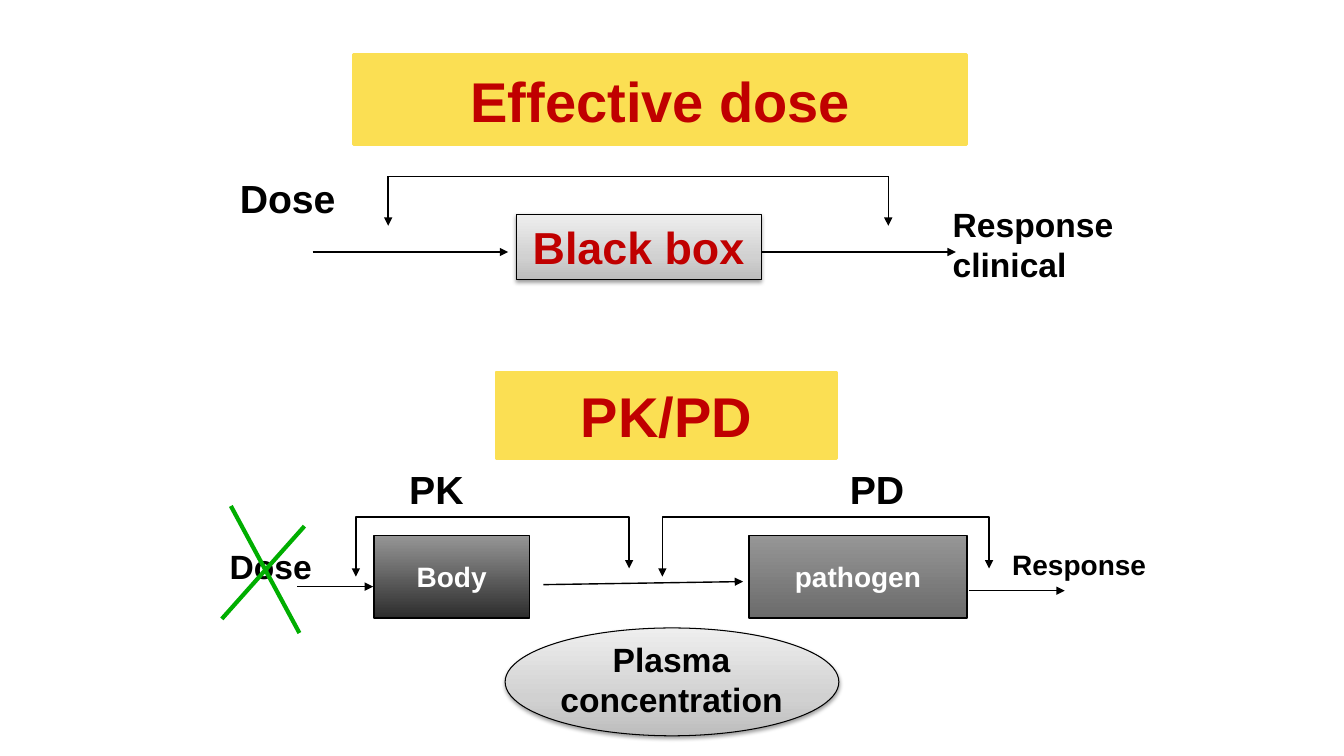
from copy import deepcopy
from dataclasses import dataclass

from lxml import etree
from pptx import Presentation
from pptx import util as u
from pptx.dml.color import RGBColor
from pptx.enum import shapes, text
from pptx.oxml import ns


@dataclass(frozen=True)
class Theme:
    """Colours, type sizes and line widths of the slide."""
    font: str = "Arial"
    ink: str = "000000"
    white: str = "FFFFFF"
    red: str = "C00000"
    yellow: str = "FBDF53"
    green: str = "00AE00"
    silver: tuple = ((0, "BDBDBD"), (0.35, "D1D1D1"), (1, "EEEEEE"))
    body: tuple = ((0, "969696"), (1, "2D2D2D"))
    pathogen: tuple = ((0, "969696"), (1, "6B6B6B"))
    banner_size: int = 40
    box_size: int = 32
    label_size: int = 28
    text_size: int = 24
    small_size: int = 20
    thin: float = 0.75
    line: float = 1
    edge: float = 2
    thick: float = 3


THEME = Theme()


@dataclass(frozen=True)
class Box:
    """A region given in inches."""
    left: float
    top: float
    width: float
    height: float

    def point(self, x, y):
        """Return a point measured from the region's corner."""
        return u.Inches(self.left + x), u.Inches(self.top + y)

    def area(self, x, y, width, height):
        """Return the place of an object measured from the region's corner."""
        return *self.point(x, y), u.Inches(width), u.Inches(height)


def set_line(line, color, width):
    """Give a line its colour and width."""
    line.color.rgb = RGBColor.from_string(color)
    line.width = u.Pt(width)


def add_effects(shape):
    """Add an empty effect list to a shape and return it."""
    return etree.SubElement(shape._element.spPr, ns.qn("a:effectLst"))


def add_shadow(shape):
    """Add a soft shadow below a shape."""
    shadow = etree.SubElement(add_effects(shape), ns.qn("a:outerShdw"),
                              blurRad=str(u.Pt(3.1)), dist=str(u.Pt(1.6)),
                              dir="5400000", rotWithShape="0")
    color = etree.SubElement(shadow, ns.qn("a:srgbClr"), val=THEME.ink)
    etree.SubElement(color, ns.qn("a:alpha"), val="38000")


def add_arrowhead(line, end="tailEnd"):
    """Put a triangle on one end of a line."""
    etree.SubElement(line._get_or_add_ln(), ns.qn(f"a:{end}"), type="triangle")


def fill_gradient(shape, stops, angle):
    """Fill a shape with a linear gradient."""
    shape.fill.gradient()
    shape.fill.gradient_angle = angle
    stop_list = shape._element.spPr.find(f".//{ns.qn('a:gsLst')}")
    while len(stop_list) < len(stops):
        stop_list.append(deepcopy(stop_list[0]))
    for stop, (position, color) in zip(shape.fill.gradient_stops, stops):
        stop.position = position
        stop.color.rgb = RGBColor.from_string(color)


def write(shape, lines, size, color=THEME.ink, centred=True, wrap=True,
          middle=False, grow=True, inset=(0.1, 0.05)):
    """Set bold text in a shape, one paragraph a line."""
    frame = shape.text_frame
    frame.text = lines
    frame.word_wrap = wrap
    frame.auto_size = (text.MSO_AUTO_SIZE.SHAPE_TO_FIT_TEXT if grow
                       else text.MSO_AUTO_SIZE.NONE)
    frame.vertical_anchor = text.MSO_ANCHOR.MIDDLE if middle else text.MSO_ANCHOR.TOP
    frame.margin_left = frame.margin_right = u.Inches(inset[0])
    frame.margin_top = frame.margin_bottom = u.Inches(inset[1])
    for para in frame.paragraphs:
        para.alignment = text.PP_ALIGN.CENTER if centred else text.PP_ALIGN.LEFT
        para.font.name = THEME.font
        para.font.size = u.Pt(size)
        para.font.bold = True
        para.font.color.rgb = RGBColor.from_string(color)


def style_banner(shape, words):
    """Format a yellow banner with a red heading."""
    shape.fill.solid()
    shape.fill.fore_color.rgb = RGBColor.from_string(THEME.yellow)
    set_line(shape.line, THEME.yellow, THEME.edge)
    write(shape, words, THEME.banner_size, THEME.red, middle=True, inset=(0.08, 0.08))


def add_label(slide, place, words, size, centred=False):
    """Add a text box that does not wrap."""
    write(slide.shapes.add_textbox(*place), words, size, centred=centred, wrap=False)


def add_panel(slide, place, stops, angle, width, kind=shapes.MSO_SHAPE.RECTANGLE):
    """Add an outlined shape with a gradient."""
    panel = slide.shapes.add_shape(kind, *place)
    fill_gradient(panel, stops, angle)
    set_line(panel.line, THEME.ink, width)
    return panel


def add_line(parent, start, end, color=THEME.ink, width=THEME.line, arrow=False):
    """Add a straight line to a slide or group, with or without an arrowhead."""
    line = parent.shapes.add_connector(shapes.MSO_CONNECTOR.STRAIGHT, *start, *end)
    set_line(line.line, color, width)
    add_effects(line)
    if arrow:
        add_arrowhead(line.line)


def add_bracket(slide, points):
    """Add an open bent line with an arrowhead on both ends."""
    builder = slide.shapes.build_freeform(*points[0])
    builder.add_line_segments(points[1:], close=False)
    bracket = builder.convert_to_shape()
    bracket.fill.background()
    bracket.shadow.inherit = False
    set_line(bracket.line, THEME.ink, THEME.line)
    for end in ("headEnd", "tailEnd"):
        add_arrowhead(bracket.line, end)


def draw_effective_dose(slide, box):
    """Draw the title and the black box between dose and response."""
    title = slide.shapes.title
    title.left, title.top, title.width, title.height = box.area(1.23, 0, 6.08, 0.86)
    style_banner(title, "Effective dose")
    add_label(slide, box.area(0, 1.12, 1.16, 0.57), "Dose", THEME.label_size)
    add_label(slide, box.area(7.07, 1.41, 1.81, 0.91), "Response\nclinical", THEME.text_size)
    black_box = add_panel(slide, box.area(2.84, 1.57, 2.43, 0.64), THEME.silver, 90, THEME.thin)
    add_shadow(black_box)
    write(black_box, "Black box", THEME.box_size, THEME.red)
    left, right, top = 1.57, 6.53, 1.19
    add_line(slide, box.point(left, top), box.point(right, top))
    for x in (left, right):
        add_line(slide, box.point(x, top), box.point(x, 1.68), arrow=True)
    for start, end in ((0.82, 2.76), (5.28, 7.2)):
        add_line(slide, box.point(start, 1.94), box.point(end, 1.94), arrow=True)


def draw_pk_pd(slide, box):
    """Draw the way from dose through body and pathogen to response."""
    ellipse = add_panel(slide, box.area(2.83, 2.54, 3.31, 1.07), THEME.silver, 90,
                        THEME.thin, shapes.MSO_SHAPE.OVAL)
    add_shadow(ellipse)
    banner = slide.shapes.add_shape(shapes.MSO_SHAPE.RECTANGLE, *box.area(2.74, 0, 3.38, 0.86))
    banner.shadow.inherit = False
    style_banner(banner, "PK/PD")
    add_label(slide, box.area(0, 1.68, 1.02, 0.5), "Dose", THEME.text_size)
    add_label(slide, box.area(7.76, 1.69, 1.54, 0.43), "Response", THEME.small_size)
    for x, words in ((1.78, "PK"), (6.15, "PD")):
        add_label(slide, box.area(x, 0.88, 0.75, 0.57), words, THEME.label_size)
    add_label(slide, box.area(3.27, 2.6, 2.42, 0.91), "Plasma\nconcentration",
              THEME.text_size, centred=True)
    for x, width, words, stops in ((1.53, 1.54, "Body", THEME.body),
                                   (5.25, 2.16, "pathogen", THEME.pathogen)):
        panel = add_panel(slide, box.area(x, 1.62, width, 0.82), stops, 270, THEME.line)
        panel.shadow.inherit = False
        write(panel, words, THEME.small_size, THEME.white, wrap=False, middle=True, grow=False)
    for left, right in ((1.35, 4.06), (4.39, 7.63)):
        corners = ((left, 2.03), (left, 1.44), (right, 1.44), (right, 1.95))
        add_bracket(slide, [box.point(*corner) for corner in corners])
    for start, end in (((0.77, 2.13), (1.52, 2.13)), ((3.21, 2.11), (5.19, 2.08)),
                       ((7.43, 2.17), (8.38, 2.17))):
        add_line(slide, box.point(*start), box.point(*end), arrow=True)
    cross = slide.shapes.add_group_shape()
    for start, end in (((0.84, 1.53), (0.02, 2.45)), ((0.11, 1.33), (0.79, 2.59))):
        add_line(cross, box.point(*start), box.point(*end), THEME.green, THEME.thick)


def main():
    """Build the slide and save the deck."""
    deck = Presentation()
    deck.slide_width, deck.slide_height = u.Inches(13.33), u.Inches(7.5)
    slide = deck.slides.add_slide(deck.slide_layouts.get_by_name("Title Only"))
    draw_effective_dose(slide, Box(2.28, 0.56, 8.88, 2.32))
    draw_pk_pd(slide, Box(2.18, 3.69, 9.3, 3.61))
    deck.save("out.pptx")


if __name__ == "__main__":
    main()
